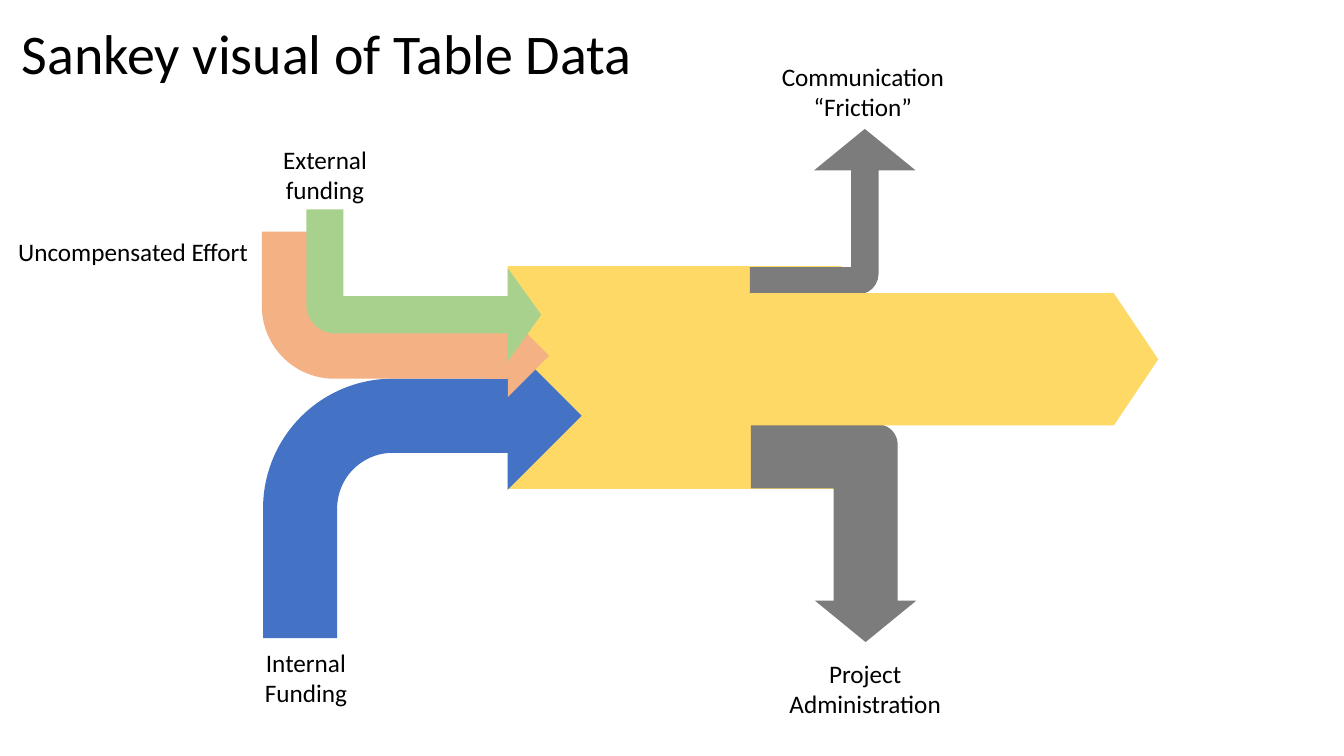
from pptx import Presentation
from pptx.dml.color import RGBColor
from pptx.enum.shapes import MSO_SHAPE
from pptx.enum.text import MSO_ANCHOR, MSO_AUTO_SIZE, PP_ALIGN
from pptx.oxml.ns import qn
from pptx.util import Cm, Pt

FONT = "Calibri"
BLACK, YELLOW, GREY = "000000", "FFD966", "7C7C7C"
BLUE, ORANGE, GREEN = "4472C4", "F4B183", "A9D18E"


def color(hex_value):
    return RGBColor.from_string(hex_value)


def format_text(text_frame, text, size, alignment, anchor=MSO_ANCHOR.TOP):
    text_frame.text = text
    text_frame.word_wrap = True
    text_frame.auto_size = MSO_AUTO_SIZE.NONE
    text_frame.vertical_anchor = anchor
    paragraph = text_frame.paragraphs[0]
    paragraph.alignment = alignment
    font = paragraph.runs[0].font
    font.name, font.size = FONT, Pt(size)
    font.color.rgb = color(BLACK)


def add_arrow(slide, kind, box, fill, adjustments=(), rotation=0, flipped=False):
    shape = slide.shapes.add_shape(kind, *(Cm(length) for length in box))
    shape.shadow.inherit = False
    shape.fill.solid()
    shape.fill.fore_color.rgb = color(fill)
    shape.line.fill.background()
    for index, value in enumerate(adjustments):
        shape.adjustments[index] = value
    shape.rotation = rotation
    if flipped:
        shape._element.spPr.find(qn("a:xfrm")).set("flipV", "1")


def add_label(slide, box, text, alignment=PP_ALIGN.CENTER):
    shape = slide.shapes.add_textbox(*(Cm(length) for length in box))
    format_text(shape.text_frame, text, 18, alignment)


def add_title(slide, left, top, width, height):
    title = slide.shapes.title
    title.left, title.top = Cm(left), Cm(top)
    title.width, title.height = Cm(width), Cm(height)
    format_text(title.text_frame, "Sankey visual of Table Data", 40, PP_ALIGN.LEFT)


def add_flow(slide, left, top, width, height):
    """Wide straight arrow for a main flow."""
    add_arrow(slide, MSO_SHAPE.RIGHT_ARROW, (left, top, width, height), YELLOW, (1, 0.336))


def add_inputs(slide, left, top):
    # Funding and effort bending into the main flow
    inputs = [
        (6.63, 5.1, 8.03, 7.47, BLUE, (), False),
        (6.6, 2.33, 7.24, 4.17, ORANGE, (0.277, 0.25, 0.25, 0.438), True),
        (7.72, 1.77, 5.92, 3.84, GREEN, (0.244, 0.309, 0.221, 0.189), True),
    ]
    for x, y, width, height, fill, adjustments, flipped in inputs:
        add_arrow(slide, MSO_SHAPE.BENT_ARROW, (left + x, top + y, width, height),
                  fill, adjustments, flipped=flipped)

    # Input labels
    add_label(slide, (left + 6.3, top + 12.67, 2.82, 1.8), "Internal Funding")
    add_label(slide, (left, top + 2.33, 6.5, 1.02), "Uncompensated Effort", PP_ALIGN.RIGHT)
    add_label(slide, (left + 6.78, top, 2.82, 1.8), "External funding")


def add_outputs(slide, left, top):
    # Losses leaving upwards and downwards
    add_arrow(slide, MSO_SHAPE.BENT_ARROW, (left + 0.64, top + 1.83, 4.17, 4.17), GREY,
              (0.165, 0.306, 0.25, 0.123), rotation=270, flipped=True)
    add_arrow(slide, MSO_SHAPE.BENT_ARROW, (left, top + 9.93, 5.49, 4.17), GREY,
              (0.388, 0.306, 0.25, 0.123), rotation=90)

    # Remaining flow
    add_flow(slide, left + 0.64, top + 5.97, 10.29, 3.33)

    # Output labels
    add_label(slide, (left + 1.27, top + 15.04, 4.55, 1.8), "Project Administration")
    add_label(slide, (left + 1.07, top, 4.83, 1.8), "Communication “Friction”")


def main():
    presentation = Presentation()
    presentation.slide_width, presentation.slide_height = Cm(33.87), Cm(19.05)
    slide = presentation.slides.add_slide(presentation.slide_layouts[5])
    add_title(slide, 0.3, 0.33, 16.61, 1.96)
    add_flow(slide, 12.8, 6.71, 10.29, 5.61)
    add_inputs(slide, 0, 3.51)
    add_outputs(slide, 18.26, 1.42)
    presentation.save("out.pptx")


if __name__ == "__main__":
    main()
